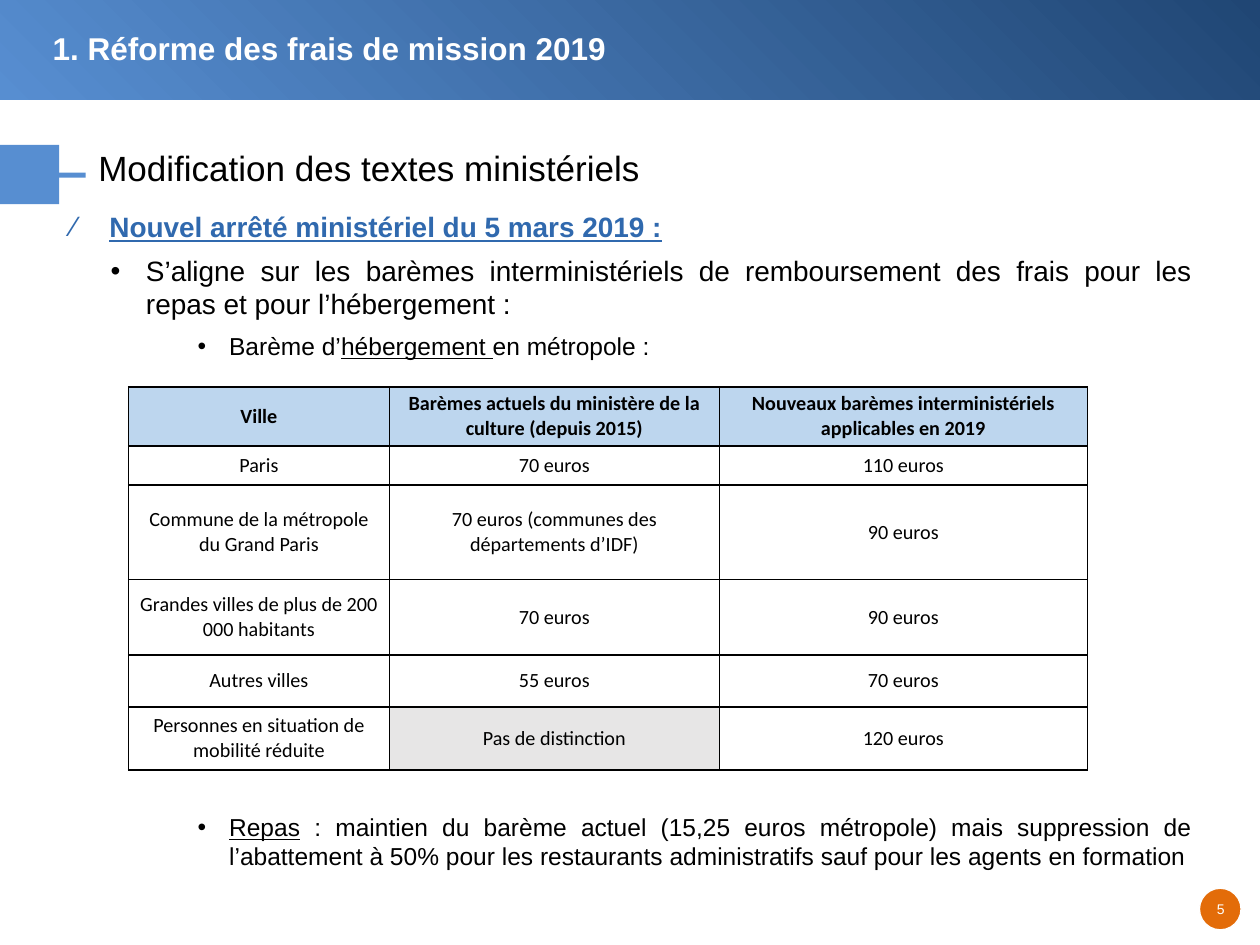
from lxml import etree
from pptx import Presentation
from pptx.dml.color import RGBColor
from pptx.enum import shapes, text
from pptx.oxml import ns
from pptx.util import Inches, Pt

BLUE = "578ED1"
LINK_BLUE = "3069AE"
BLACK = "000000"
WHITE = "FFFFFF"

COLUMNS = [2.07, 2.62, 2.92]
ROWS = [0.47, 0.31, 0.75, 0.6, 0.41, 0.5]
RATES = [
    ["Ville", "Barèmes actuels du ministère de la culture (depuis 2015)",
     "Nouveaux barèmes interministériels\napplicables en 2019"],
    ["Paris", "70 euros", "110 euros"],
    ["Commune de la métropole du Grand Paris",
     "70 euros (communes des départements d’IDF)", "90 euros"],
    ["Grandes villes de plus de 200 000 habitants", "70 euros", "90 euros"],
    ["Autres villes", "55 euros", "70 euros"],
    ["Personnes en situation de mobilité réduite", "Pas de distinction", "120 euros"],
]


def color(value):
    return RGBColor.from_string(value)


def place(shape, left, top, width, height):
    bounds = {"left": left, "top": top, "width": width, "height": height}
    for name, value in bounds.items():
        setattr(shape, name, Inches(value))


def format_font(font, size, tint, face="Arial", **styles):
    font.color.rgb = color(tint)
    values = {"size": Pt(size), "name": face, "bold": False, **styles}
    for name, value in values.items():
        setattr(font, name, value)


def add_span(para, words, size, tint, **styles):
    span = para.add_run()
    span.text = words
    format_font(span.font, size, tint, **styles)


def add_block(page, kind, bounds, fill=BLUE, line=None):
    block = page.shapes.add_shape(kind, *map(Inches, bounds))
    block.shadow.inherit = False
    block.fill.solid()
    block.fill.fore_color.rgb = color(fill)
    if line:
        block.line.color.rgb = color(line)
        block.line.width = Pt(0.75)
    else:
        block.line.fill.background()
    return block


def add_banner(page):
    banner = add_block(page, shapes.MSO_SHAPE.RECTANGLE, (0, 0, 10, 0.79))
    banner.fill.gradient()
    banner.fill.gradient_angle = 225
    for stop, position, tint in zip(banner.fill.gradient_stops, (0, 1), ("204674", BLUE)):
        stop.position = position
        stop.color.rgb = color(tint)


def add_label(page, bounds, words, size, tint, wrap=True, align=None, inset=0.1, **styles):
    box = page.shapes.add_textbox(*map(Inches, bounds))
    frame = box.text_frame
    frame.word_wrap = wrap
    frame.margin_left = frame.margin_right = Inches(inset)
    para = frame.paragraphs[0]
    para.alignment = align
    add_span(para, words, size, tint, **styles)


def set_title(page):
    title = page.shapes.title
    place(title, 0.68, 1.06, 8.88, 0.56)
    title.text_frame.vertical_anchor = text.MSO_ANCHOR.TOP
    para = title.text_frame.paragraphs[0]
    para.alignment = text.PP_ALIGN.LEFT
    para.line_spacing = Pt(28)
    add_span(para, "Modification des textes ministériels", 20, BLACK)


def set_bullet(para, mark, tint, margin, indent):
    props = para._p.get_or_add_pPr()
    props.set("marL", str(Inches(margin)))
    props.set("indent", str(Inches(indent)))
    tone = etree.SubElement(props, ns.qn("a:buClr"))
    etree.SubElement(tone, ns.qn("a:srgbClr"), val=tint)
    etree.SubElement(props, ns.qn("a:buFont"), typeface="Arial")
    etree.SubElement(props, ns.qn("a:buChar"), char=mark)


def add_point(para, level, spans, before=6):
    mark, tint, margin, indent, size, spacing = [
        ("⁄", LINK_BLUE, 0.3, -0.3, 16, Pt(19)),
        ("•", BLACK, 0.59, -0.28, 16, Pt(19)),
        ("•", BLACK, 1.25, -0.25, 14, None),
    ][level]
    values = {"level": level, "alignment": text.PP_ALIGN.JUSTIFY,
              "space_before": Pt(before), "line_spacing": spacing}
    for name, value in values.items():
        setattr(para, name, value)
    set_bullet(para, mark, tint, margin, indent)
    for words, underline in spans:
        add_span(para, words, size, tint, bold=level == 0, underline=underline)


def add_body(page):
    box = page.shapes.add_textbox(*map(Inches, (0.47, 1.62, 9.09, 5.59)))
    frame = box.text_frame
    frame.word_wrap = True
    add_point(frame.paragraphs[0], 0, [("Nouvel arrêté ministériel du 5 mars 2019 :", True)])
    add_point(frame.add_paragraph(), 1, [
        ("S’aligne sur les barèmes interministériels de remboursement des frais "
         "pour les repas et pour l’hébergement :", False)])
    add_point(frame.add_paragraph(), 2, [
        ("Barème d’", False), ("hébergement ", True), ("en métropole :", False)])
    add_point(frame.add_paragraph(), 2, [
        ("Repas", True),
        (" : maintien du barème actuel (15,25 euros métropole) mais suppression de "
         "l’abattement à 50% pour les restaurants administratifs sauf pour les agents "
         "en formation", False)], before=258)


def add_borders(cell):
    props = cell._tc.get_or_add_tcPr()
    for index, side in enumerate(("a:lnL", "a:lnR", "a:lnT", "a:lnB")):
        line = etree.Element(ns.qn(side), w=str(Pt(1)))
        fill = etree.SubElement(line, ns.qn("a:solidFill"))
        etree.SubElement(fill, ns.qn("a:srgbClr"), val=BLACK)
        props.insert(index, line)


def fill_cell(cell, words, fill, bold):
    values = {"margin_left": Inches(0.07), "margin_right": Inches(0.07),
              "margin_top": 0, "margin_bottom": 0,
              "vertical_anchor": text.MSO_ANCHOR.MIDDLE, "text": words}
    for name, value in values.items():
        setattr(cell, name, value)
    for para in cell.text_frame.paragraphs:
        para.alignment = text.PP_ALIGN.CENTER
        for span in para.runs:
            format_font(span.font, 11.5, BLACK, "Calibri", bold=bold)
    if fill:
        cell.fill.solid()
        cell.fill.fore_color.rgb = color(fill)
    else:
        cell.fill.background()
    add_borders(cell)


def add_rates(page):
    bounds = (1.02, 3.07, sum(COLUMNS), sum(ROWS))
    table = page.shapes.add_table(len(ROWS), len(COLUMNS), *map(Inches, bounds)).table
    table.first_row = table.horz_banding = False
    for column, width in zip(table.columns, COLUMNS):
        column.width = Inches(width)
    for row, height in zip(table.rows, ROWS):
        row.height = Inches(height)
    for row, entries in enumerate(RATES):
        for column, words in enumerate(entries):
            fill = "BDD6EE" if row == 0 else None
            if words == "Pas de distinction":
                fill = "E7E6E6"
            fill_cell(table.cell(row, column), words, fill, row == 0)


def main():
    deck = Presentation()
    deck.slide_width, deck.slide_height = Inches(10), Inches(7.5)
    page = deck.slides.add_slide(deck.slide_layouts[5])
    add_banner(page)
    add_block(page, shapes.MSO_SHAPE.RECTANGLE, (0, 1.37, 0.68, 0.04))
    add_block(page, shapes.MSO_SHAPE.OVAL, (9.52, 7.05, 0.33, 0.33), "E36C09", WHITE)
    add_label(page, (9.54, 7.1, 0.3, 0.23), "5", 8, WHITE, False,
              text.PP_ALIGN.CENTER, 0.05)
    add_body(page)
    set_title(page)
    add_block(page, shapes.MSO_SHAPE.RECTANGLE, (0, 1.15, 0.47, 0.47))
    add_label(page, (0.32, 0.18, 6.58, 0.4), "1. Réforme des frais de mission 2019",
              18, WHITE, bold=True)
    add_rates(page)
    deck.save("out.pptx")


if __name__ == "__main__":
    main()
